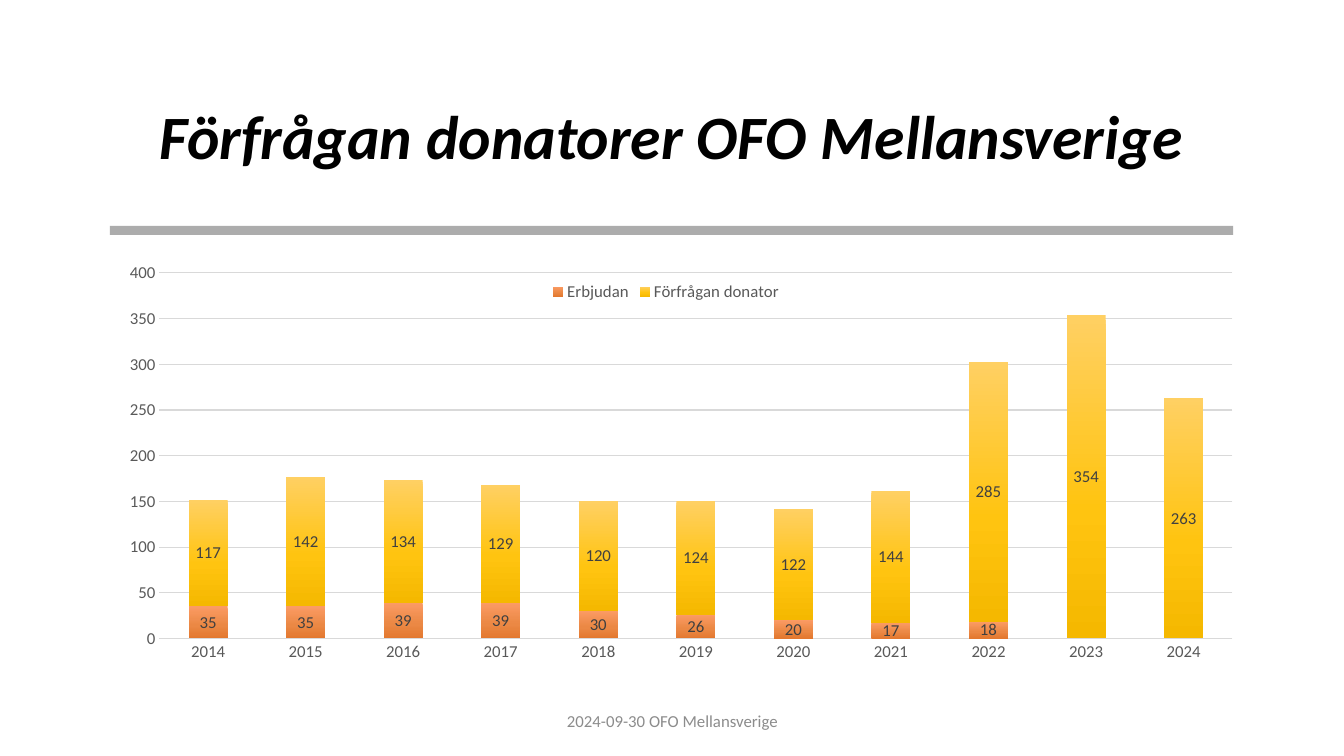
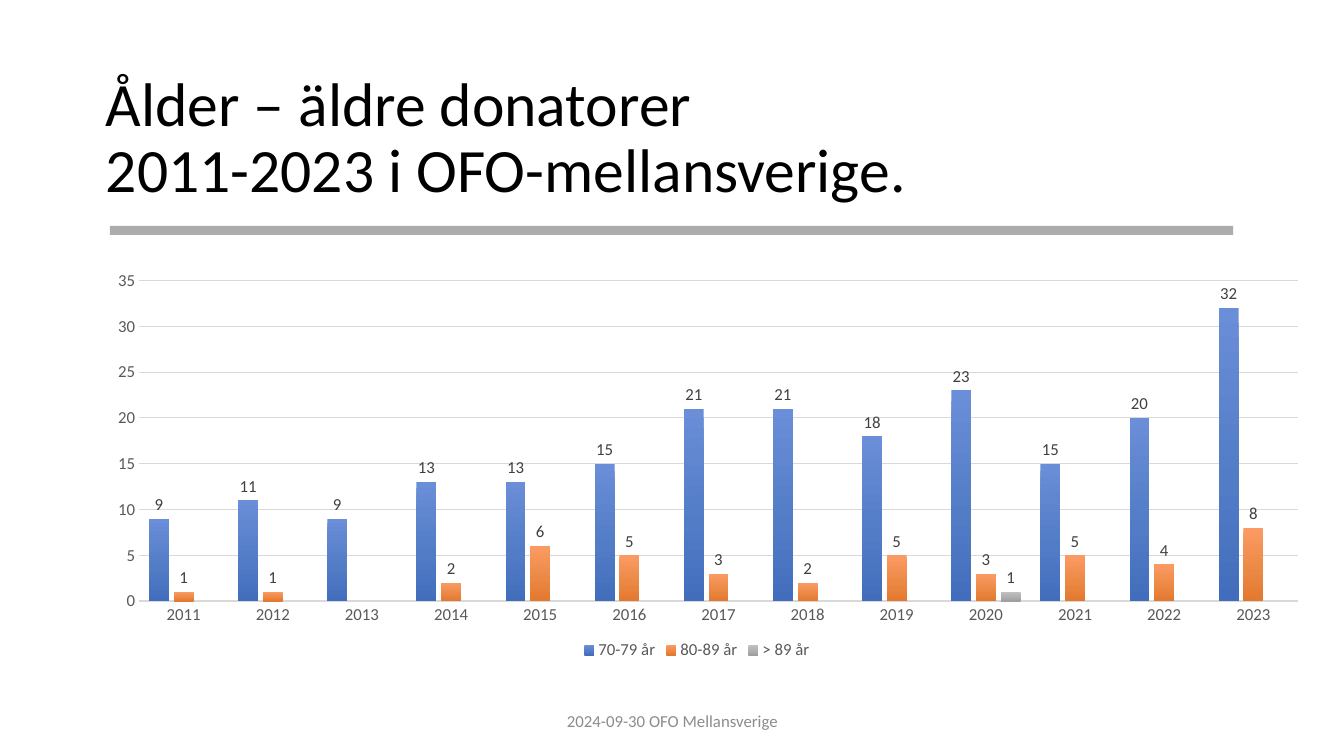
import pptx
import pptx.chart.data
import pptx.dml.color
import pptx.enum.chart
import pptx.enum.shapes
import pptx.enum.text
import pptx.oxml.ns
import pptx.util
from lxml import etree

PX = 9144  # EMU per px, 100 px to the inch
FACE = "Calibri"
RGB = pptx.dml.color.RGBColor
BLACK = RGB(0x00, 0x00, 0x00)
GREY = RGB(0x80, 0x80, 0x80)
FOOT = RGB(0x8C, 0x8C, 0x8C)
AXIS = RGB(0x59, 0x59, 0x59)
LABEL = RGB(0x40, 0x40, 0x40)
GRID = RGB(0xD9, 0xD9, 0xD9)
STOPS = (0, 60, 100)
BLUE = (RGB(0x6A, 0x8E, 0xD7), RGB(0x52, 0x7C, 0xC6), RGB(0x41, 0x6D, 0xBC))
ORANGE = (RGB(0xFB, 0x9B, 0x64), RGB(0xEB, 0x88, 0x44), RGB(0xE3, 0x78, 0x2F))
GOLD = (RGB(0xFF, 0xD0, 0x63), RGB(0xFF, 0xC4, 0x10), RGB(0xF5, 0xB8, 0x00))
SILVER = (RGB(0xC0, 0xC0, 0xC0), RGB(0xAF, 0xAF, 0xAF), RGB(0x9E, 0x9E, 0x9E))

ALIGN = pptx.enum.text.PP_ALIGN
KIND = pptx.enum.chart.XL_CHART_TYPE
PLACE = pptx.enum.chart.XL_LABEL_POSITION
SIDE = pptx.enum.chart.XL_LEGEND_POSITION
qn = pptx.oxml.ns.qn


def emu(*box):
    return [n * PX for n in box]


def style(font, size=12, color=AXIS, bold=False, italic=False):
    font.name = FACE
    font.size = pptx.util.Pt(size)
    font.color.rgb = color
    font.bold = bold
    font.italic = italic


def write(frame, text, align=ALIGN.LEFT, line=1.0, after=0, **look):
    """Fill a text frame with one formatted paragraph."""
    frame.word_wrap = True
    frame.vertical_anchor = pptx.enum.text.MSO_ANCHOR.MIDDLE
    para = frame.paragraphs[0]
    para.text = text
    para.alignment = align
    para.line_spacing = line
    para.space_after = pptx.util.Pt(after)
    for run in para.runs:
        style(run.font, **look)


def add_page(deck, title, **look):
    """Add a slide with its title, grey band and footer."""
    slide = deck.slides.add_slide(deck.slide_layouts[5])
    head = slide.shapes.title
    head.left, head.top, head.width, head.height = emu(95, 66, 1143, 145)
    write(head.text_frame, title, line=0.9, size=44, color=BLACK, **look)

    band = slide.shapes.add_shape(
        pptx.enum.shapes.MSO_SHAPE.RECTANGLE, *emu(109, 224, 1114, 9))
    band.shadow.inherit = False
    band.line.fill.background()
    band.fill.solid()
    band.fill.fore_color.rgb = GREY
    tint = band.fill._xPr.find(".//" + qn("a:srgbClr"))
    etree.SubElement(tint, qn("a:alpha"), val="65000")

    foot = slide.shapes.add_textbox(*emu(442, 695, 450, 40))
    write(foot.text_frame, "2024-09-30 OFO Mellansverige", align=ALIGN.CENTER,
          after=6, color=FOOT)
    return slide


def set_layout(host, index, **parts):
    """Place a chart part by fractions of the chart's size."""
    for old in host.findall(qn("c:layout")):
        host.remove(old)
    outer = etree.Element(qn("c:layout"))
    inner = etree.SubElement(outer, qn("c:manualLayout"))
    if "w" in parts:
        etree.SubElement(inner, qn("c:layoutTarget"), val="inner")
    for key in "xy":
        etree.SubElement(inner, qn(f"c:{key}Mode"), val="edge")
    for key, value in parts.items():
        etree.SubElement(inner, qn(f"c:{key}"), val=str(value))
    host.insert(index, outer)


def shade(series, colors):
    fill = series.format.fill
    fill.gradient()
    fill.gradient_angle = 270
    stops = series._element.find(".//" + qn("a:gsLst"))
    for old in list(stops):
        stops.remove(old)
    for at, color in zip(STOPS, colors):
        stop = etree.SubElement(stops, qn("a:gs"), pos=str(at * 1000))
        etree.SubElement(stop, qn("a:srgbClr"), val=str(color))


def set_axes(chart, top, step):
    cats, vals = chart.category_axis, chart.value_axis
    for axis in (cats, vals):
        style(axis.tick_labels.font)
        axis.major_tick_mark = pptx.enum.chart.XL_TICK_MARK.NONE
    cats.format.line.color.rgb = GRID
    cats.format.line.width = pptx.util.Pt(1)
    vals.format.line.fill.background()
    vals.minimum_scale, vals.maximum_scale = 0, top
    vals.major_unit = step
    vals.has_major_gridlines = True
    vals.major_gridlines.format.line.color.rgb = GRID
    vals.major_gridlines.format.line.width = pptx.util.Pt(0.75)


def add_bars(slide, box, kind, years, rows, top, step, gap, overlap, place, side, area):
    """Add a column chart; rows hold name, colours and values."""
    data = pptx.chart.data.CategoryChartData()
    data.categories = [str(year) for year in years]
    for name, _, values in rows:
        data.add_series(name, values)
    chart = slide.shapes.add_chart(kind, *emu(*box), data).chart
    style(chart.font, size=10, color=BLACK)
    chart.has_title = False
    set_axes(chart, top, step)

    plot = chart.plots[0]
    plot.vary_by_categories = False
    plot.gap_width, plot.overlap = gap, overlap
    for series, (_, colors, _) in zip(plot.series, rows):
        shade(series, colors)
        series.invert_if_negative = False
        labels = series.data_labels
        labels.show_value = True
        labels.position = place
        style(labels.font, color=LABEL)

    chart.has_legend = True
    chart.legend.position = side
    chart.legend.include_in_layout = side == SIDE.TOP
    style(chart.legend.font)
    set_layout(chart._chartSpace.find(".//" + qn("c:plotArea")), 0,
               **dict(zip("xywh", area)))
    return chart


def main():
    deck = pptx.Presentation()
    deck.slide_width, deck.slide_height = emu(1333, 750)

    asked = add_page(deck, "Förfrågan donatorer OFO Mellansverige",
                     align=ALIGN.CENTER, bold=True, italic=True)
    chart = add_bars(
        asked, (109, 261, 1114, 396), KIND.COLUMN_STACKED, range(2014, 2025),
        [("Erbjudan", ORANGE,
          (35, 35, 39, 39, 30, 26, 20, 17, 18, None, None)),
         ("Förfrågan donator", GOLD,
          (117, 142, 134, 129, 120, 124, 122, 144, 285, 354, 263))],
        top=400, step=50, gap=150, overlap=100, place=PLACE.CENTER,
        side=SIDE.TOP, area=(0.044, 0.018, 0.956, 0.923))
    set_layout(chart.legend._element, 1, x=0.39, y=0.03)

    ages = add_page(deck, "Ålder – äldre donatorer\v2011-2023 i OFO-mellansverige.")
    add_bars(
        ages, (95, 263, 1193, 396), KIND.COLUMN_CLUSTERED, range(2011, 2024),
        [("70-79 år", BLUE,
          (9, 11, 9, 13, 13, 15, 21, 21, 18, 23, 15, 20, 32)),
         ("80-89 år", ORANGE, (1, 1, None, 2, 6, 5, 3, 2, 5, 3, 5, 4, 8)),
         ("> 89 år", SILVER, [None] * 9 + [1] + [None] * 3)],
        top=35, step=5, gap=100, overlap=-24, place=PLACE.OUTSIDE_END,
        side=SIDE.BOTTOM, area=(0.037, 0.039, 0.964, 0.803))

    deck.save("out.pptx")


if __name__ == "__main__":
    main()
